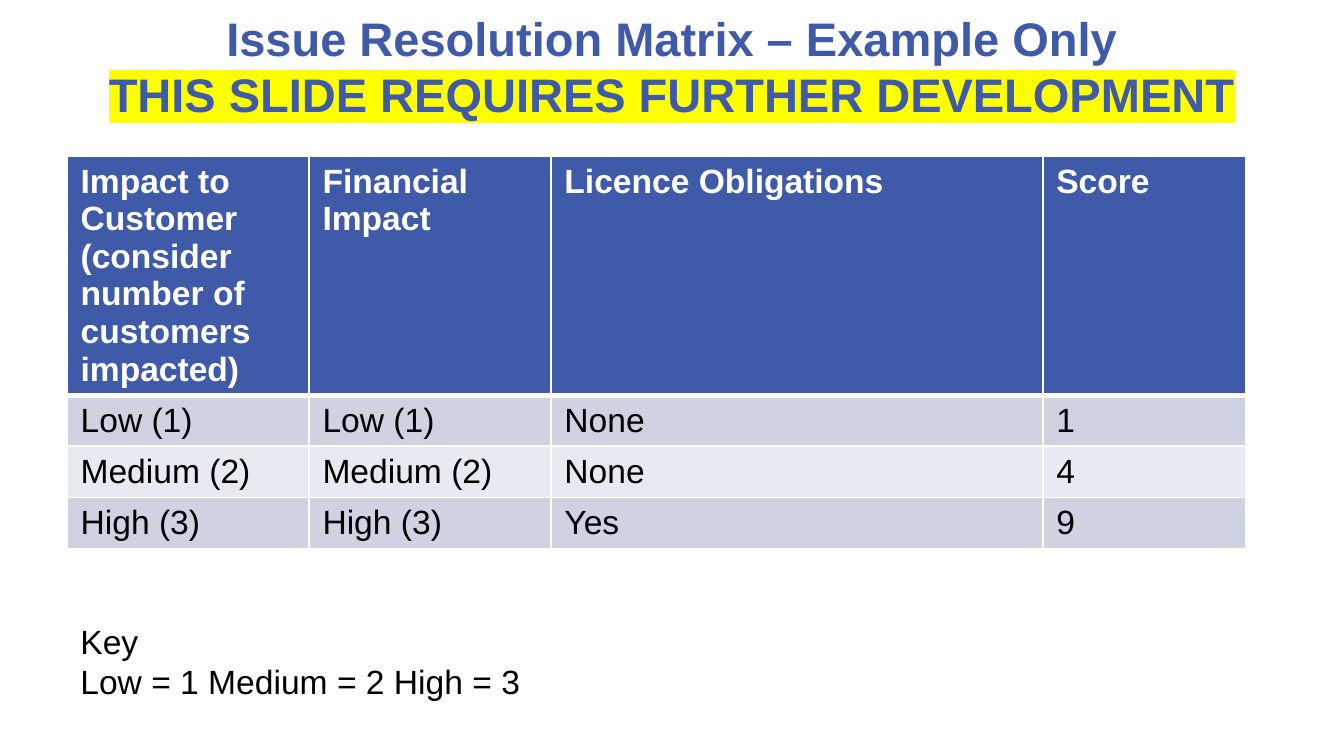
import pptx
import pptx.util
import pptx.oxml
import pptx.oxml.ns
import pptx.dml.color
import pptx.enum.text

Inches = pptx.util.Inches
RGB = pptx.dml.color.RGBColor
BLUE = RGB(0x3E, 0x5A, 0xA8)
BAND = RGB(0xCE, 0xD2, 0xE1)
PALE = RGB(0xE8, 0xEA, 0xF1)
WHITE = RGB(255, 255, 255)
BLACK = RGB(0, 0, 0)
YELLOW = RGB(255, 255, 0)

HEADS = ["Impact to Customer (consider number of customers impacted)",
         "Financial Impact", "Licence Obligations", "Score"]
ROWS = [
    ["Low (1)", "Low (1)", "None", "1"],
    ["Medium (2)", "Medium (2)", "None", "4"],
    ["High (3)", "High (3)", "Yes", "9"],
]
WIDTHS = [1.8, 1.8, 3.66, 1.51]
HEIGHTS = [1.77] + [0.37] * len(ROWS)


def write(para, text, font="Arial", size=18, color=BLACK, bold=False, mark=None):
    run = para.add_run()
    run.text = text
    run.font.size = pptx.util.Pt(size)
    run.font.bold = bold
    run.font.color.rgb = color
    if mark is not None:
        run._r.get_or_add_rPr().append(pptx.oxml.parse_xml(
            f'<a:highlight {pptx.oxml.ns.nsdecls("a")}>'
            f'<a:srgbClr val="{mark}"/></a:highlight>'))
    run.font.name = font


class Deck:
    def __init__(self, font="Arial"):
        self.font = font
        self.show = pptx.Presentation()
        self.show.slide_width = Inches(10)
        self.show.slide_height = Inches(10 * 9 / 16)
        self.slide = self.show.slides.add_slide(self.show.slide_layouts[5])

    def title(self, box, text, note):
        shape = self.slide.shapes.title
        shape.left, shape.top, shape.width, shape.height = map(Inches, box)
        frame = shape.text_frame
        frame.word_wrap = True
        frame.auto_size = pptx.enum.text.MSO_AUTO_SIZE.NONE
        frame.vertical_anchor = pptx.enum.text.MSO_ANCHOR.MIDDLE
        para = frame.paragraphs[0]
        para.alignment = pptx.enum.text.PP_ALIGN.CENTER
        style = dict(font=self.font, size=25.2, color=BLUE, bold=True)
        write(para, text, **style)
        para.add_line_break()
        write(para, note, mark=YELLOW, **style)

    def edge(self, cell, side, width):
        cell._tc.get_or_add_tcPr().append(pptx.oxml.parse_xml(
            f'<a:{side} {pptx.oxml.ns.nsdecls("a")} w="{pptx.util.Pt(width)}">'
            f'<a:solidFill><a:srgbClr val="{WHITE}"/></a:solidFill></a:{side}>'))

    def cell(self, cell, text, fill, color, head, top, base):
        for side, width in zip(("lnL", "lnR", "lnT", "lnB"), (1, 1, top, base)):
            self.edge(cell, side, width)
        cell.fill.solid()
        cell.fill.fore_color.rgb = fill
        write(cell.text_frame.paragraphs[0], text, font=self.font,
              color=color, bold=head)

    def table(self, left, top, heads, rows, widths, heights):
        grid = self.slide.shapes.add_table(
            len(heights), len(widths), Inches(left), Inches(top),
            Inches(sum(widths)), Inches(sum(heights))).table
        for col, width in zip(grid.columns, widths):
            col.width = Inches(width)
        for row, height in zip(grid.rows, heights):
            row.height = Inches(height)
        for r, texts in enumerate([heads] + rows):
            head = r == 0
            fill = BLUE if head else BAND if r % 2 else PALE
            for c, text in enumerate(texts):
                self.cell(grid.cell(r, c), text, fill, WHITE if head else BLACK,
                          head, 3 if r == 1 else 1, 3 if head else 1)

    def text(self, box, lines):
        frame = self.slide.shapes.add_textbox(*map(Inches, box)).text_frame
        frame.word_wrap = True
        frame.auto_size = pptx.enum.text.MSO_AUTO_SIZE.SHAPE_TO_FIT_TEXT
        for i, line in enumerate(lines):
            para = frame.add_paragraph() if i else frame.paragraphs[0]
            write(para, line, font=self.font)


def main():
    deck = Deck()
    deck.title((0.5, 0.14, 9, 0.7), "Issue Resolution Matrix – Example Only",
               "THIS SLIDE REQUIRES FURTHER DEVELOPMENT")
    deck.table(0.5, 1.16, HEADS, ROWS, WIDTHS, HEIGHTS)
    deck.text((0.5, 4.57, 5.84, 0.71), ["Key", "Low = 1 Medium = 2 High = 3"])
    deck.show.save("out.pptx")


if __name__ == "__main__":
    main()
